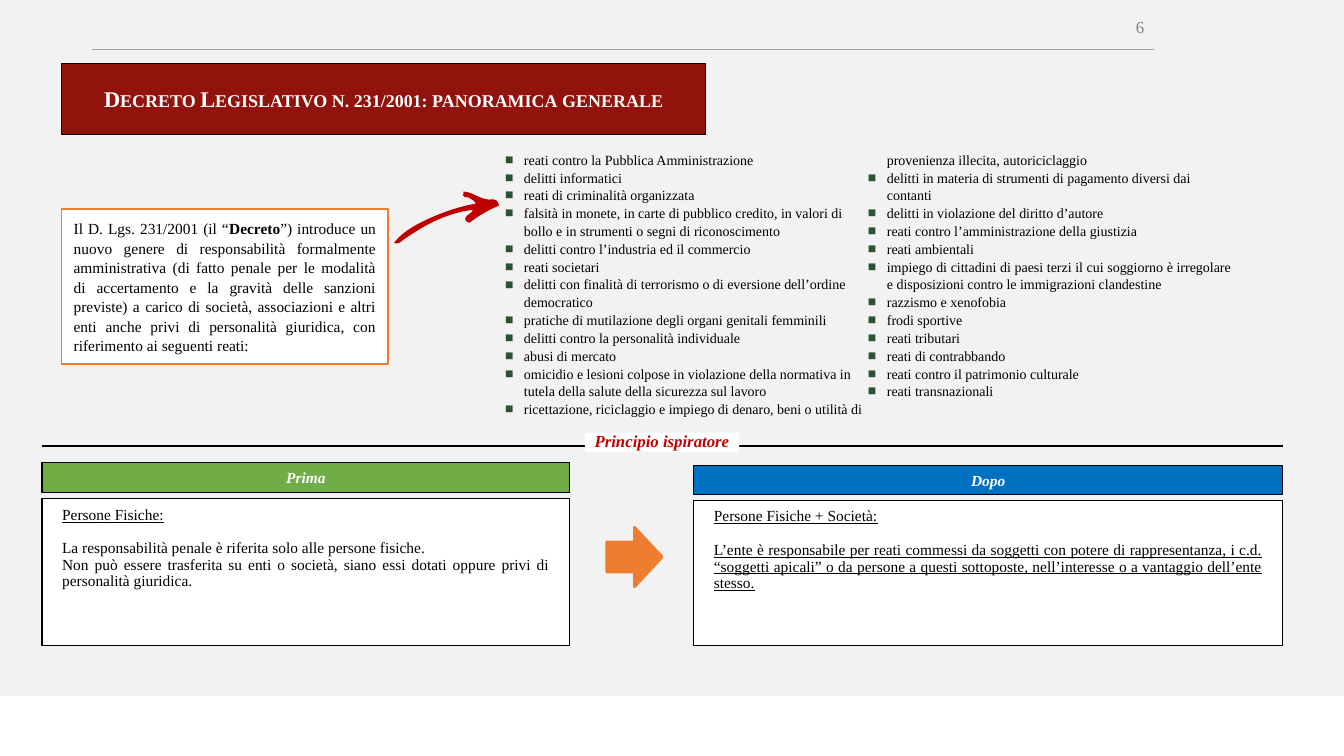
from lxml.etree import SubElement
from pptx import Presentation
from pptx.dml.color import RGBColor
from pptx.enum.shapes import MSO_CONNECTOR, MSO_SHAPE
from pptx.enum.text import MSO_ANCHOR, MSO_AUTO_SIZE, PP_ALIGN
from pptx.oxml import parse_xml
from pptx.oxml.ns import nsdecls, qn
from pptx.util import Pt

COLORS = {
    "background": "F2F2F2", "white": "FFFFFF", "black": "000000",
    "rule": "A5A5A5", "number": "808080", "title": "92130B", "red": "C00000",
    "orange": "ED7D31", "green": "70AD47", "blue": "0070C0", "bullet": "2C5234",
}
LEFT, CENTER, RIGHT, JUSTIFY = PP_ALIGN.LEFT, PP_ALIGN.CENTER, PP_ALIGN.RIGHT, PP_ALIGN.JUSTIFY

CRIMES = [
    "reati contro la Pubblica Amministrazione",
    "delitti informatici",
    "reati di criminalità organizzata",
    "falsità in monete, in carte di pubblico credito, in valori di bollo e in strumenti o segni di riconoscimento",
    "delitti contro l’industria ed il commercio",
    "reati societari",
    "delitti con finalità di terrorismo o di eversione dell’ordine democratico",
    "pratiche di mutilazione degli organi genitali femminili",
    "delitti contro la personalità individuale",
    "abusi di mercato",
    "omicidio e lesioni colpose in violazione della normativa in tutela della salute della sicurezza sul lavoro",
    "ricettazione, riciclaggio e impiego di denaro, beni o utilità di provenienza illecita, autoriciclaggio",
    "delitti in materia di strumenti di pagamento diversi dai contanti",
    "delitti in violazione del diritto d’autore",
    "reati contro l’amministrazione della giustizia",
    "reati ambientali",
    "impiego di cittadini di paesi terzi il cui soggiorno è irregolare e disposizioni contro le immigrazioni clandestine",
    "razzismo e xenofobia",
    "frodi sportive",
    "reati tributari",
    "reati di contrabbando",
    "reati contro il patrimonio culturale",
    "reati transnazionali",
]
FIRST_JUSTIFIED = 14

# Curved arrow: start point, then two control points and an end point per curve
ARROW_START = (334.8, 141.1)
ARROW_CURVES = [
    (331.9, 141.1, 331.2, 140.4, 330.5, 139), (331.9, 139, 330.5, 136.8, 331.2, 136.8),
    (338.4, 137.5, 342, 141.8, 349.2, 142.6), (354.2, 141.8, 355.7, 143.3, 356.4, 146.9),
    (349.2, 149.8, 340.6, 154.8, 335.5, 159.1), (334.1, 158.4, 331.9, 158.4, 332.6, 155.5),
    (333.4, 153.4, 337.7, 151.9, 337.7, 149.8), (316.8, 152.6, 301.7, 162, 290.2, 169.9),
    (287.3, 171.4, 285.1, 175, 281.5, 173.5), (285.1, 168.5, 290.9, 164.2, 297.4, 160.6),
    (309.6, 154.1, 324, 148.3, 339.8, 145.4), (339.1, 143.3, 337, 142.6, 334.8, 141.1),
]


def rgb(name):
    return RGBColor.from_string(COLORS[name])


class SlideBuilder:
    font = "Times New Roman"

    def __init__(self, slide):
        self.slide = slide
        self.shapes = slide.shapes

    def place(self, sp, x, y, w, h):
        sp.left, sp.top, sp.width, sp.height = Pt(x), Pt(y), Pt(w), Pt(h)

    def paint(self, sp, fill, line=None, weight=1):
        sp.fill.solid()
        sp.fill.fore_color.rgb = rgb(fill)
        if line:
            sp.line.color.rgb = rgb(line)
            sp.line.width = Pt(weight)
        else:
            sp.line.fill.background()

    def frame(self, sp, inset=(7.2, 3.6), anchor=MSO_ANCHOR.MIDDLE, wrap=True):
        tf = sp.text_frame
        tf.auto_size = MSO_AUTO_SIZE.NONE
        tf.word_wrap = wrap
        tf.vertical_anchor = anchor
        tf.margin_left = tf.margin_right = Pt(inset[0])
        tf.margin_top = tf.margin_bottom = Pt(inset[1])
        return tf

    def paragraph(self, tf, runs, size, color="black", align=CENTER, spacing=1.0, before=0):
        """Each run is a text and a string of style letters: b, i, u."""
        first = tf.paragraphs[0]
        p = tf.add_paragraph() if first.runs else first
        p.alignment, p.line_spacing, p.space_before = align, spacing, Pt(before)
        for text, style in runs:
            r = p.add_run()
            r.text = text
            r.font.name, r.font.size = self.font, Pt(size)
            r.font.color.rgb = rgb(color)
            r.font.bold, r.font.italic = "b" in style, "i" in style
            r.font.underline = "u" in style
        return p

    def shape(self, kind, x, y, w, h, fill, line=None, weight=1):
        sp = self.shapes.add_shape(kind, Pt(x), Pt(y), Pt(w), Pt(h))
        sp.shadow.inherit = False
        self.paint(sp, fill, line, weight)
        return sp

    def rect(self, *args):
        return self.shape(MSO_SHAPE.RECTANGLE, *args)

    def label(self, text, box, fill, color, size=11, line=None, inset=(7.2, 3.6), spacing=1.0):
        tf = self.frame(self.rect(*box, fill, line), inset, wrap=False)
        self.paragraph(tf, [(text, "bi")], size, color, spacing=spacing)

    def rule(self, x1, x2, y, color, weight):
        line = self.shapes.add_connector(MSO_CONNECTOR.STRAIGHT, Pt(x1), Pt(y), Pt(x2), Pt(y))
        line.line.color.rgb = rgb(color)
        line.line.width = Pt(weight)
        SubElement(line._element.spPr, qn("a:effectLst"))

    def title(self, text, x, y, w, h):
        sp = self.shapes.title
        self.place(sp, x, y, w, h)
        sp._element.spPr.insert(1, parse_xml(
            f'<a:prstGeom {nsdecls("a")} prst="round2DiagRect"><a:avLst/></a:prstGeom>'))
        self.paint(sp, "title", "black", 0.75)
        p = self.paragraph(self.frame(sp), [(text, "b")], 16, "white")
        p.runs[0].font._element.set("cap", "small")

    def bullets(self, items, x, y, w, h):
        sp = self.slide.placeholders[1]
        self.place(sp, x, y, w, h)
        tf = self.frame(sp, (0, 0), MSO_ANCHOR.TOP)
        body = tf._txBody.bodyPr
        body.set("numCol", "2")
        body.set("spcCol", "0")
        for i, item in enumerate(items):
            align = LEFT if i < FIRST_JUSTIFIED else JUSTIFY
            p = self.paragraph(tf, [(item, "")], 10, align=align, spacing=1.06)
            pPr = p._p.get_or_add_pPr()
            pPr.set("marL", str(Pt(13.5)))
            pPr.set("indent", str(-Pt(13.5)))
            color = SubElement(pPr, qn("a:buClr"))
            SubElement(color, qn("a:srgbClr"), val=COLORS["bullet"])
            SubElement(pPr, qn("a:buFont"), typeface=self.font)
            SubElement(pPr, qn("a:buChar"), char="■")

    def panel(self, heading, fill, x, w, head_y, head_h, body_y, body_h, paragraphs):
        tf = self.frame(self.rect(x, body_y, w, body_h, "white", "black"),
                        (14.4, 5.76), MSO_ANCHOR.TOP)
        for text, style, before in paragraphs:
            self.paragraph(tf, [(text, style)], 11, align=JUSTIFY, spacing=0.9, before=before)
        self.label(heading, (x, head_y, w, head_h), fill, "white", line="black")

    def curved_arrow(self, start, curves, fill, steps=8):
        points, (x0, y0) = [], start
        for x1, y1, x2, y2, x3, y3 in curves:
            for t in (n / steps for n in range(1, steps + 1)):
                a, b, c, d = (1 - t) ** 3, 3 * t * (1 - t) ** 2, 3 * t * t * (1 - t), t ** 3
                points.append((Pt(a * x0 + b * x1 + c * x2 + d * x3),
                               Pt(a * y0 + b * y1 + c * y2 + d * y3)))
            x0, y0 = x3, y3
        builder = self.shapes.build_freeform(Pt(start[0]), Pt(start[1]))
        builder.add_line_segments(points, close=True)
        sp = builder.convert_to_shape()
        sp.shadow.inherit = False
        self.paint(sp, fill)


def main():
    prs = Presentation()
    prs.slide_width, prs.slide_height = Pt(960), Pt(540)
    slide = prs.slides.add_slide(prs.slide_layouts[1])
    slide.background.fill.solid()
    slide.background.fill.fore_color.rgb = rgb("background")
    s = SlideBuilder(slide)

    # Page frame and number
    s.rect(0, 497, 960, 43, "white")
    s.rule(66, 824.5, 35.3, "rule", 0.5)
    number = s.shapes.add_textbox(Pt(608.4), Pt(5), Pt(216), Pt(28.8))
    s.paragraph(s.frame(number), [("6", "")], 12, "number", RIGHT)

    # Title and list of crimes
    s.title("Decreto Legislativo n. 231/2001: panoramica generale", 44, 45.2, 460, 50.6)
    s.bullets(CRIMES, 360.8, 107.3, 518.4, 185)

    # Introduction and its arrow
    intro = s.frame(s.rect(44, 149.2, 233.3, 111, "white", "orange"), (8.64, 8.64))
    s.paragraph(intro, [
        ("Il D. Lgs. 231/2001 (il “", ""),
        ("Decreto", "b"),
        ("”) introduce un nuovo genere di responsabilità formalmente amministrativa (di fatto "
         "penale per le modalità di accertamento e la gravità delle sanzioni previste) a carico "
         "di società, associazioni e altri enti anche privi di personalità giuridica, con "
         "riferimento ai seguenti reati:", ""),
    ], 11, align=JUSTIFY, spacing=1.06)
    s.curved_arrow(ARROW_START, ARROW_CURVES, "red")

    # Guiding principle divider
    s.rule(30, 916.5, 318.7, "black", 1)
    s.label("Principio ispiratore", (417.8, 309, 110.2, 13.7), "white", "red", 12,
            inset=(5.76, 0), spacing=0.95)

    # Before and after
    s.panel("Prima", "green", 30, 377, 330.5, 21.3, 356.3, 105, [
        ("Persone Fisiche:", "u", 0),
        ("La responsabilità penale è riferita solo alle persone fisiche.", "", 12),
        ("Non può essere trasferita su enti o società, siano essi dotati oppure privi di "
         "personalità giuridica.", "", 0),
    ])
    s.panel("Dopo", "blue", 495.5, 420.7, 332.6, 20.8, 357.6, 103.7, [
        ("Persone Fisiche + Società:", "u", 0),
        ("L’ente è responsabile per reati commessi da soggetti con potere di rappresentanza, "
         "i c.d. “soggetti apicali” o da persone a questi sottoposte, nell’interesse o a "
         "vantaggio dell’ente stesso.", "u", 12),
    ])
    s.shape(MSO_SHAPE.RIGHT_ARROW, 433.4, 376.6, 39.6, 42.5, "orange", "orange", 2)

    prs.save("out.pptx")


if __name__ == "__main__":
    main()
